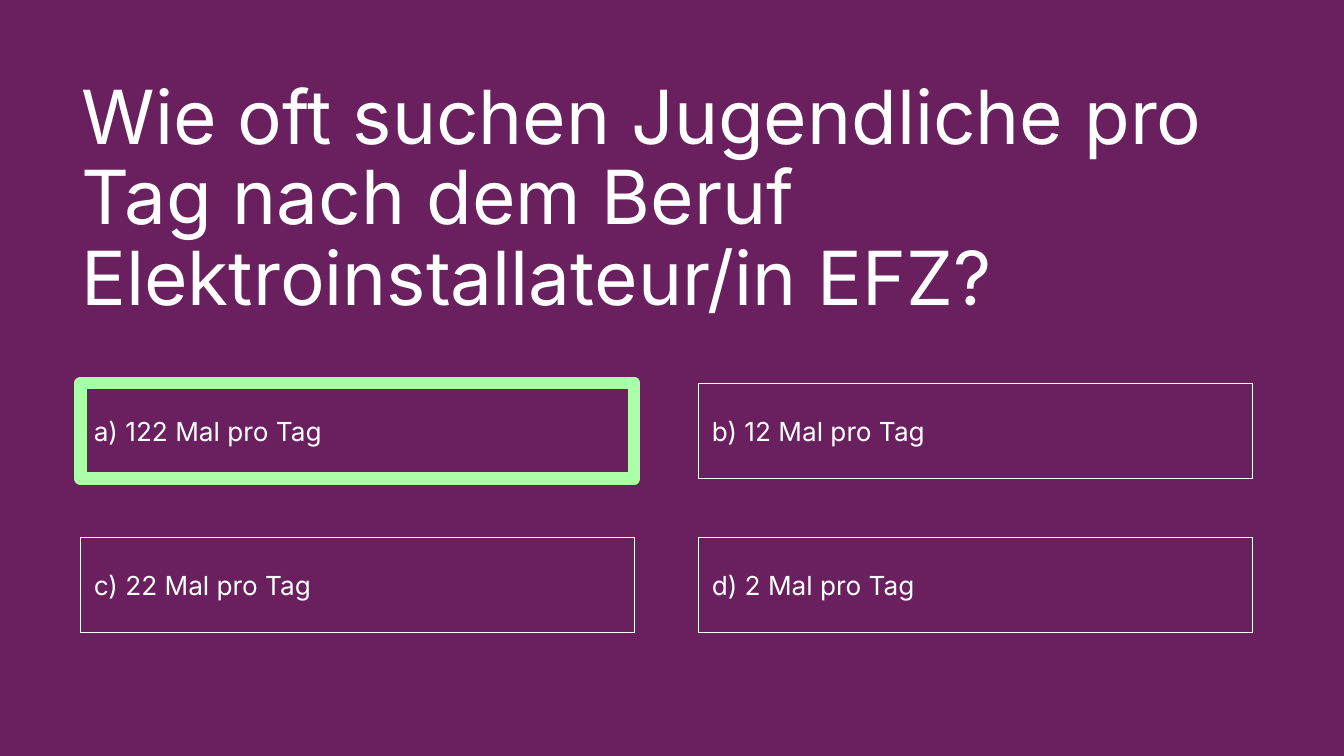
from pptx import Presentation
from pptx.dml.color import RGBColor
from pptx.enum.shapes import MSO_SHAPE
from pptx.enum.text import MSO_ANCHOR, PP_ALIGN
from pptx.util import Inches, Pt

QUESTION = "Wie oft suchen Jugendliche pro Tag nach dem Beruf Elektroinstallateur/in EFZ?"
ANSWERS = ["a) 122 Mal pro Tag", "b) 12 Mal pro Tag", "c) 22 Mal pro Tag", "d) 2 Mal pro Tag"]
CORRECT = 0

COLORS = {"background": "6A205F", "text": "FFFFFF", "highlight": "AAFFA8"}
FONT = "Inter"
COLUMNS = 2
GRID_LEFT, GRID_TOP = 0.8, 3.8
BOX_WIDTH, BOX_HEIGHT = 5.49, 0.95
COLUMN_STEP, ROW_STEP = 6.13, 1.53
BOX_INSET = 0.13


def color(role):
    return RGBColor.from_string(COLORS[role])


def write(frame, text, size, inset):
    frame.word_wrap = True
    frame.margin_left = frame.margin_right = Inches(inset)
    frame.margin_top = frame.margin_bottom = Inches(inset)
    paragraph = frame.paragraphs[0]
    paragraph.text = text
    paragraph.alignment = PP_ALIGN.LEFT
    paragraph.font.name = FONT
    paragraph.font.size = Pt(size)
    paragraph.font.color.rgb = color("text")
    return paragraph


def add_frame(slide, index, role, line_width):
    """Outline the grid cell of the answer with this index."""
    row, column = divmod(index, COLUMNS)
    box = slide.shapes.add_shape(
        MSO_SHAPE.RECTANGLE,
        Inches(GRID_LEFT + column * COLUMN_STEP), Inches(GRID_TOP + row * ROW_STEP),
        Inches(BOX_WIDTH), Inches(BOX_HEIGHT))
    box.shadow.inherit = False
    box.fill.background()
    box.line.color.rgb = color(role)
    box.line.width = Pt(line_width)
    return box


def main():
    deck = Presentation()
    deck.slide_width, deck.slide_height = Inches(13.33), Inches(7.5)
    slide = deck.slides.add_slide(deck.slide_layouts[6])
    slide.background.fill.solid()
    slide.background.fill.fore_color.rgb = color("background")

    title = slide.shapes.add_textbox(Inches(0.81), Inches(0.79), Inches(11.31), Inches(2.42))
    write(title.text_frame, QUESTION, 53.3, 0).line_spacing = 0.9

    for index, answer in enumerate(ANSWERS):
        box = add_frame(slide, index, "text", 0.75)
        box.text_frame.vertical_anchor = MSO_ANCHOR.MIDDLE
        write(box.text_frame, answer, 18.7, BOX_INSET)
    add_frame(slide, CORRECT, "highlight", 9)

    deck.save("out.pptx")


if __name__ == "__main__":
    main()
